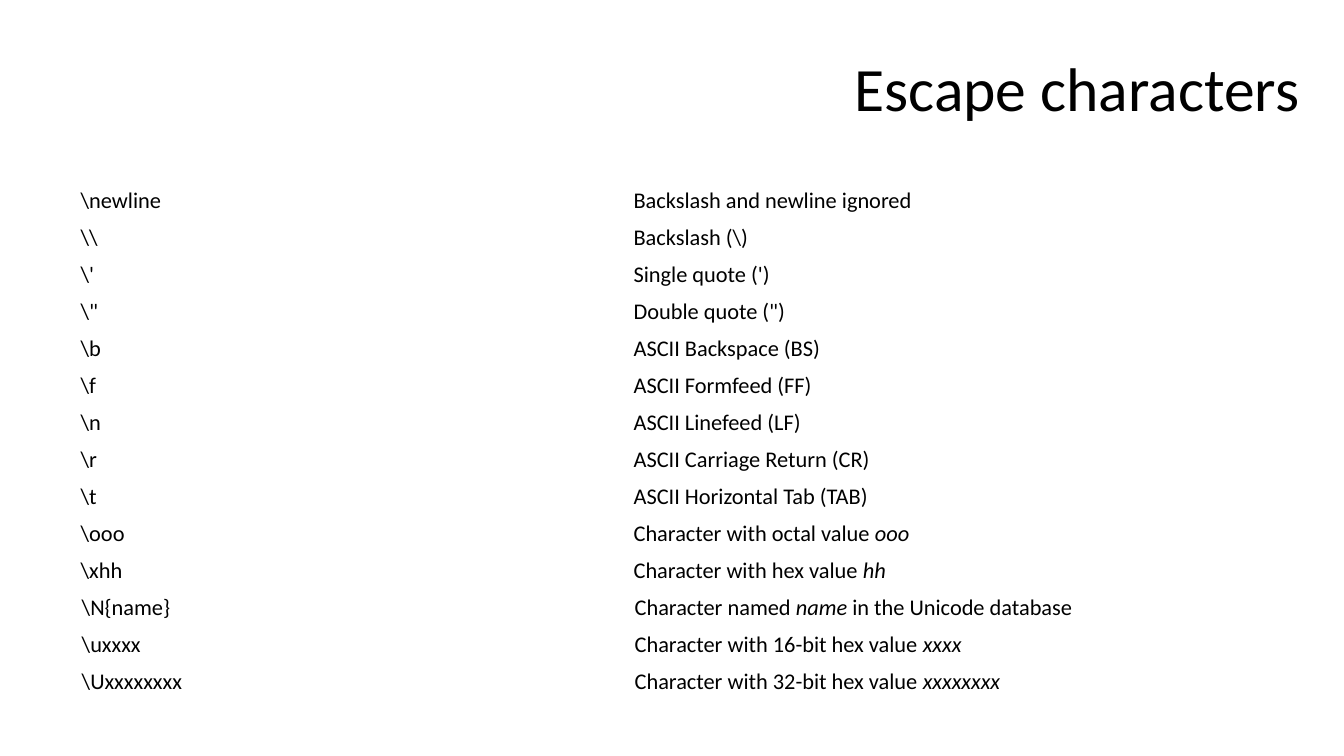
from pptx import Presentation
from pptx.dml.color import RGBColor
from pptx.enum.text import MSO_ANCHOR, PP_ALIGN
from pptx.util import Inches, Pt

MIDDLE = MSO_ANCHOR.MIDDLE
RIGHT = PP_ALIGN.RIGHT
BLACK = RGBColor(0x00, 0x00, 0x00)
FONT = "Calibri"
BLANK_LAYOUT = 6

# Boxes: left, top, width, height in inches
TITLE_BOX = (1.49, 0.18, 11.5, 1.45)
TABLE_BOX = (0.71, 1.81, 10.97, 5.13)

# Each description is split into runs that alternate plain and italic
ESCAPES = [
    (r"\newline", ["Backslash and newline ignored"]),
    ("\\\\", ["Backslash (\\)"]),
    (r"\'", ["Single quote (')"]),
    (r'\"', ['Double quote (")']),
    (r"\b", ["ASCII Backspace (BS)"]),
    (r"\f", ["ASCII Formfeed (FF)"]),
    (r"\n", ["ASCII Linefeed (LF)"]),
    (r"\r", ["ASCII Carriage Return (CR)"]),
    (r"\t", ["ASCII Horizontal Tab (TAB)"]),
    (r"\ooo", ["Character with octal value ", "ooo"]),
    (r"\xhh", ["Character with hex value ", "hh"]),
    (r"\N{name}", ["Character named ", "name", " in the Unicode database"]),
    (r"\uxxxx", ["Character with 16-bit hex value ", "xxxx"]),
    (r"\Uxxxxxxxx", ["Character with 32-bit hex value ", "xxxxxxxx"]),
]
NARROW_MARGIN_ROWS = 11  # the rows after these keep the default margins


def add_runs(paragraph, texts, size):
    for index, text in enumerate(texts):
        run = paragraph.add_run()
        run.text = text
        run.font.name = FONT
        run.font.size = Pt(size)
        run.font.color.rgb = BLACK
        run.font.italic = index % 2 == 1


def add_title(slide, box, text):
    shape = slide.shapes.add_textbox(*map(Inches, box))
    frame = shape.text_frame
    frame.word_wrap = True
    frame.vertical_anchor = MIDDLE
    paragraph = frame.paragraphs[0]
    paragraph.alignment = RIGHT
    paragraph.line_spacing = 0.9
    add_runs(paragraph, [text], 44)


def add_escape_table(slide, box, rows):
    frame = slide.shapes.add_table(len(rows), 2, *map(Inches, box))
    table = frame.table
    table.first_row = False
    table.horz_banding = False
    for row_index, (escape, description) in enumerate(rows):
        for column, texts in enumerate(([escape], description)):
            cell = table.cell(row_index, column)
            cell.fill.background()
            cell.vertical_anchor = MIDDLE
            if row_index < NARROW_MARGIN_ROWS:
                cell.margin_left = cell.margin_right = Inches(0.09)
                cell.margin_top = cell.margin_bottom = Inches(0.05)
            add_runs(cell.text_frame.paragraphs[0], texts, 16)


def main():
    presentation = Presentation()
    presentation.slide_width = Inches(13.33)
    presentation.slide_height = Inches(7.5)
    slide = presentation.slides.add_slide(presentation.slide_layouts[BLANK_LAYOUT])
    add_title(slide, TITLE_BOX, "Escape characters")
    add_escape_table(slide, TABLE_BOX, ESCAPES)
    presentation.save("out.pptx")


if __name__ == "__main__":
    main()
